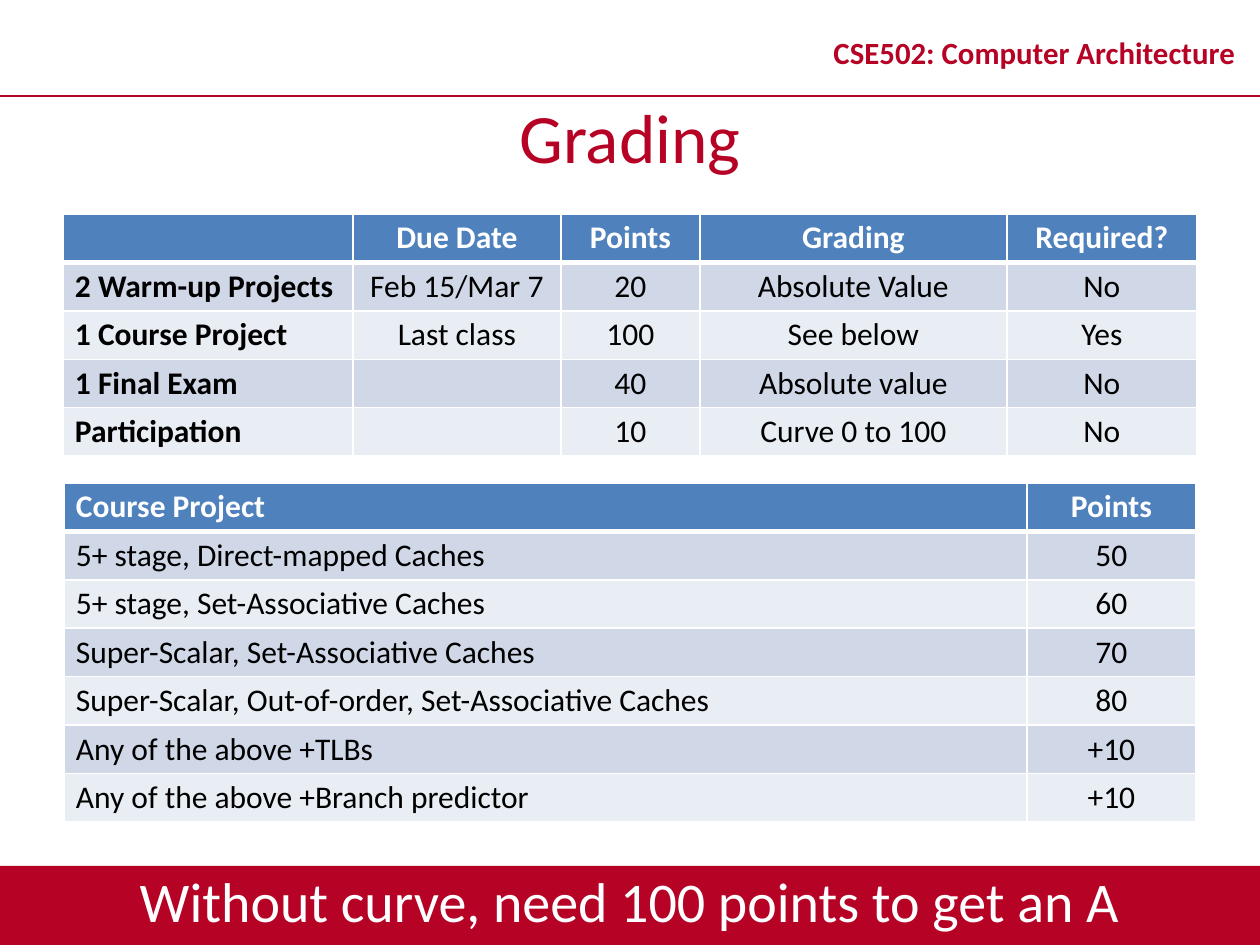
from lxml import etree
from pptx import Presentation
from pptx.dml.color import RGBColor
from pptx.enum.shapes import MSO_CONNECTOR, MSO_SHAPE
from pptx.enum.text import MSO_ANCHOR, MSO_AUTO_SIZE, PP_ALIGN
from pptx.oxml.ns import qn
from pptx.util import Emu, Pt

PX = 914400 // 126
RED, WHITE, BLACK = "B60225", "FFFFFF", "000000"
HEAD_FILL, BAND_FILLS = "4F81BD", ("D0D8E8", "E9EDF4")
ROW_HEIGHT = 48

GRADING = [
    ["", "Due Date", "Points", "Grading", "Required?"],
    ["2 Warm-up Projects", "Feb 15/Mar 7", "20", "Absolute Value", "No"],
    ["1 Course Project", "Last class", "100", "See below", "Yes"],
    ["1 Final Exam", "", "40", "Absolute value", "No"],
    ["Participation", "", "10", "Curve 0 to 100", "No"],
]
PROJECT = [
    ["Course Project", "Points"],
    ["5+ stage, Direct-mapped Caches", "50"],
    ["5+ stage, Set-Associative Caches", "60"],
    ["Super-Scalar, Set-Associative Caches", "70"],
    ["Super-Scalar, Out-of-order, Set-Associative Caches", "80"],
    ["Any of the above +TLBs", "+10"],
    ["Any of the above +Branch predictor", "+10"],
]


def px(*lengths):
    return [Emu(length * PX) for length in lengths]


def rgb(color):
    return RGBColor.from_string(color)


def set_values(target, values):
    for name, value in values.items():
        setattr(target, name, value)


def write(frame, text, size, color, bold=False, align=PP_ALIGN.CENTER,
          anchor=MSO_ANCHOR.MIDDLE):
    set_values(frame, {"word_wrap": True, "auto_size": MSO_AUTO_SIZE.NONE,
                       "vertical_anchor": anchor})
    write_para(frame.paragraphs[0], text, size, color, bold, align)


def write_para(para, text, size, color, bold, align):
    para.alignment = align
    if text:
        span = para.add_run()
        span.text = text
        set_values(span.font, {"name": "Calibri", "size": Pt(size), "bold": bold})
        span.font.color.rgb = rgb(color)


def add_border(cell, side, points):
    line = etree.SubElement(cell._tc.get_or_add_tcPr(), qn(f"a:ln{side}"),
                            w=str(Pt(points)))
    fill = etree.SubElement(line, qn("a:solidFill"))
    etree.SubElement(fill, qn("a:srgbClr"), val=WHITE)


def add_header(page, left, top, width, height):
    # Course name at the right, above a full-width rule
    box = page.shapes.add_textbox(*px(left + width - 451, top + 16, 451, height - 16))
    write(box.text_frame, "CSE502: Computer Architecture", 17.6, RED, bold=True)
    box.text_frame.paragraphs[0].line_spacing = 0.8

    rule = page.shapes.add_connector(
        MSO_CONNECTOR.STRAIGHT, *px(left, top + height, left + width, top + height))
    rule.line.color.rgb = rgb(RED)
    rule.line.width = Pt(1)
    etree.SubElement(rule._element.spPr, qn("a:effectLst"))


def add_title(page, left, top, width, height):
    title = page.shapes.title
    places = px(left, top, width, height)
    set_values(title, dict(zip(("left", "top", "width", "height"), places)))
    write(title.text_frame, "Grading", 39.6, RED)


def add_grid(page, left, top, widths, rows, bold_labels=False):
    frame = page.shapes.add_table(len(rows), len(widths), *px(
        left, top, sum(widths), ROW_HEIGHT * len(rows)))
    table = frame.table
    for column, width in zip(table.columns, px(*widths)):
        column.width = width

    for r, row in enumerate(rows):
        for c, text in enumerate(row):
            cell = table.cell(r, c)
            is_head, is_label = r == 0, c == 0
            # The rule below the heading row is thicker than the others
            weights = {"L": 1, "R": 1, "T": 3 if r == 1 else 1, "B": 3 if is_head else 1}
            for side, points in weights.items():
                add_border(cell, side, points)
            cell.fill.solid()
            cell.fill.fore_color.rgb = rgb(HEAD_FILL if is_head else BAND_FILLS[(r - 1) % 2])
            margins = zip(("left", "top", "right", "bottom"), px(12, 5, 12, 5))
            set_values(cell, {f"margin_{side}": gap for side, gap in margins})
            write_para(cell.text_frame.paragraphs[0], text, 18,
                       WHITE if is_head else BLACK,
                       is_head or (is_label and bold_labels),
                       PP_ALIGN.LEFT if is_label else PP_ALIGN.CENTER)


def add_footer(page, left, top, width, height):
    # Red bar with the closing message, whose box starts a little higher
    bar = page.shapes.add_shape(MSO_SHAPE.RECTANGLE, *px(left, top, width, height))
    bar.shadow.inherit = False
    bar.fill.solid()
    bar.fill.fore_color.rgb = rgb(RED)
    bar.line.fill.background()

    box = page.shapes.add_textbox(*px(left, top - 6, width, height))
    write(box.text_frame, "Without curve, need 100 points to get an A", 32, WHITE,
          anchor=MSO_ANCHOR.TOP)


def main():
    deck = Presentation()
    deck.slide_width, deck.slide_height = px(1260, 945)
    page = deck.slides.add_slide(deck.slide_layouts[5])

    add_header(page, 0, 0, 1260, 96)
    add_title(page, 0, 96, 1260, 79)
    add_grid(page, 63, 214, [290, 208, 139, 307, 190], GRADING, bold_labels=True)
    add_grid(page, 64, 483, [963, 169], PROJECT)
    add_footer(page, 0, 866, 1260, 79)
    deck.save("out.pptx")


if __name__ == "__main__":
    main()
